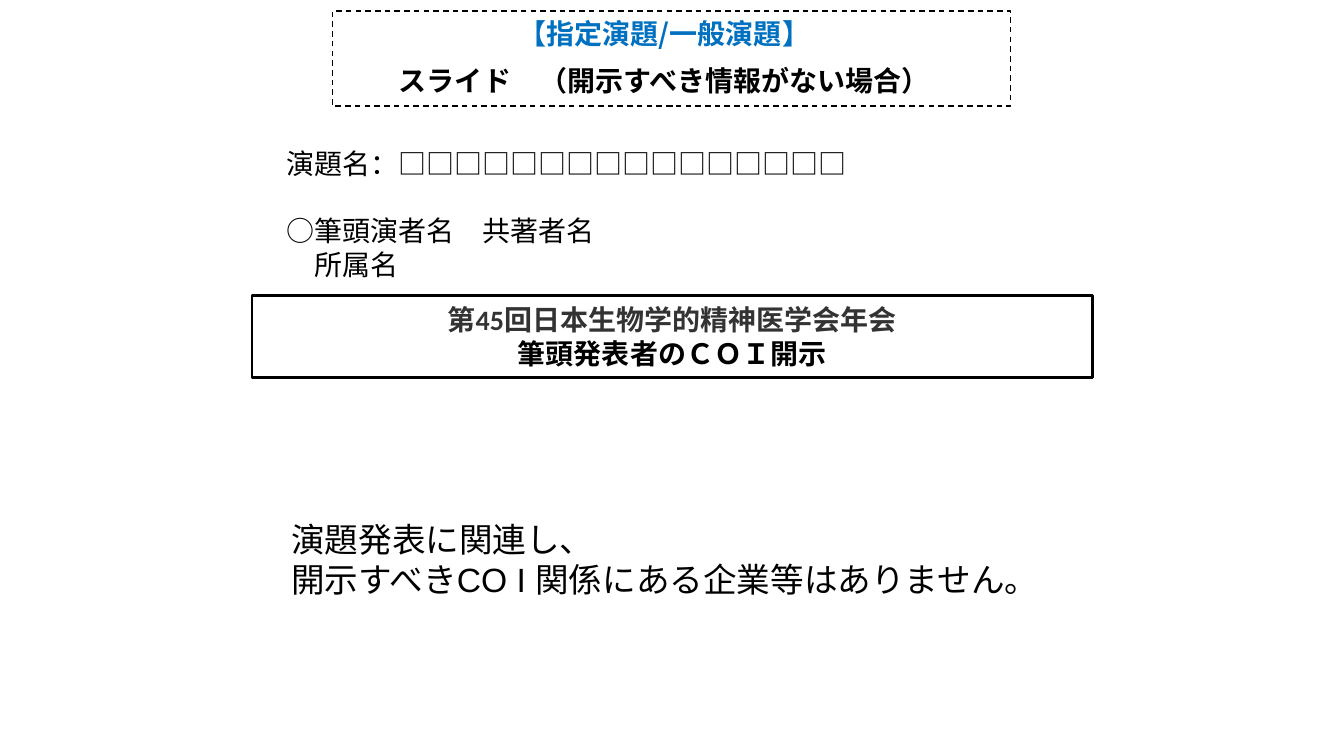
"""Build a conflict-of-interest disclosure slide with nothing to declare."""
import pptx
import pptx.dml.color
import pptx.enum.dml
import pptx.enum.shapes
import pptx.enum.text
import pptx.oxml
import pptx.oxml.ns
import pptx.util

Cm = pptx.util.Cm
Pt = pptx.util.Pt
RGBColor = pptx.dml.color.RGBColor
LEFT = pptx.enum.text.PP_ALIGN.LEFT
CENTER = pptx.enum.text.PP_ALIGN.CENTER
TOP = pptx.enum.text.MSO_ANCHOR.TOP
MIDDLE = pptx.enum.text.MSO_ANCHOR.MIDDLE
DASH = pptx.enum.dml.MSO_LINE.DASH

BLACK = RGBColor(0x00, 0x00, 0x00)
WHITE = RGBColor(0xFF, 0xFF, 0xFF)
BLUE = RGBColor(0x00, 0x70, 0xC0)
GREY = RGBColor(0x33, 0x33, 0x33)
ASIAN_FONT = "Noto Sans CJK JP"
LINE_FACTOR = 1.2

PRESENTATION_DETAILS = [
    ("演題名：□□□□□□□□□□□□□□□□", {}),
    ("○筆頭演者名　共著者名", {"before": 24}),
    ("　所属名", {}),
]
STATEMENT = [
    ("演題発表に関連し、", {"size": 24}),
    ("開示すべきCO I 関係にある企業等はありません。", {"size": 24}),
]
SLIDE_TYPE = [
    ("【指定演題/一般演題】", {"font": ASIAN_FONT, "color": BLUE, "bold": True,
                     "align": CENTER, "right_indent": 0.36}),
    ("スライド　（開示すべき情報がない場合）",
     {"font": ASIAN_FONT, "bold": True, "align": CENTER, "before": 10}),
]
MEETING = [
    ("第45回日本生物学的精神医学会年会",
     {"font": "Calibri", "color": GREY, "bold": True, "align": CENTER}),
    ("筆頭発表者のＣＯＩ開示", {"bold": True, "align": CENTER}),
]

TEXT_BOXES = [
    (PRESENTATION_DETAILS, (6.96, 3.56, 19.94, 3.68)),
    (STATEMENT, (7.09, 12.95, 19.71, 2.79)),
]
FRAMES = [
    (SLIDE_TYPE, (8.38, 0.28, 17.09, 2.39), {"width": 1, "dash": DASH}),
    (MEETING, (6.35, 7.44, 21.18, 2.08),
     {"width": 2, "fill": WHITE, "anchor": MIDDLE}),
]


def write_text(para, text, size=20, font="Arial", color=BLACK, bold=False,
               align=LEFT, before=0, right_indent=0):
    para.alignment = align
    para.line_spacing = Pt(size * LINE_FACTOR)
    if before:
        para.space_before = Pt(before)
    if right_indent:
        para._p.get_or_add_pPr().set("marR", str(Cm(right_indent)))
    span = para.add_run()
    span.text = text
    span.font.size = Pt(size)
    span.font.name = font
    span.font.bold = bold
    span.font.color.rgb = color
    asian = pptx.oxml.parse_xml(
        f'<a:ea {pptx.oxml.ns.nsdecls("a")} typeface="{ASIAN_FONT}"/>')
    span._r.rPr.find(pptx.oxml.ns.qn("a:latin")).addnext(asian)


def fill_box(box, lines, anchor=TOP):
    frame = box.text_frame
    frame.word_wrap = True
    frame.vertical_anchor = anchor
    for index, (text, style) in enumerate(lines):
        para = frame.add_paragraph() if index else frame.paragraphs[0]
        write_text(para, text, **style)


def add_frame(page, lines, bounds, width, fill=None, dash=None, anchor=TOP):
    box = page.shapes.add_shape(
        pptx.enum.shapes.MSO_SHAPE.RECTANGLE, *map(Cm, bounds))
    box.shadow.inherit = False
    if fill is None:
        box.fill.background()
    else:
        box.fill.solid()
        box.fill.fore_color.rgb = fill
    box.line.color.rgb = BLACK
    box.line.width = Pt(width)
    if dash is not None:
        box.line.dash_style = dash
    fill_box(box, lines, anchor)


def main():
    deck = pptx.Presentation()
    deck.slide_width, deck.slide_height = Cm(33.87), Cm(19.05)
    page = deck.slides.add_slide(deck.slide_layouts[6])
    for lines, bounds in TEXT_BOXES:
        fill_box(page.shapes.add_textbox(*map(Cm, bounds)), lines)
    for lines, bounds, style in FRAMES:
        add_frame(page, lines, bounds, **style)
    deck.save("out.pptx")


if __name__ == "__main__":
    main()
